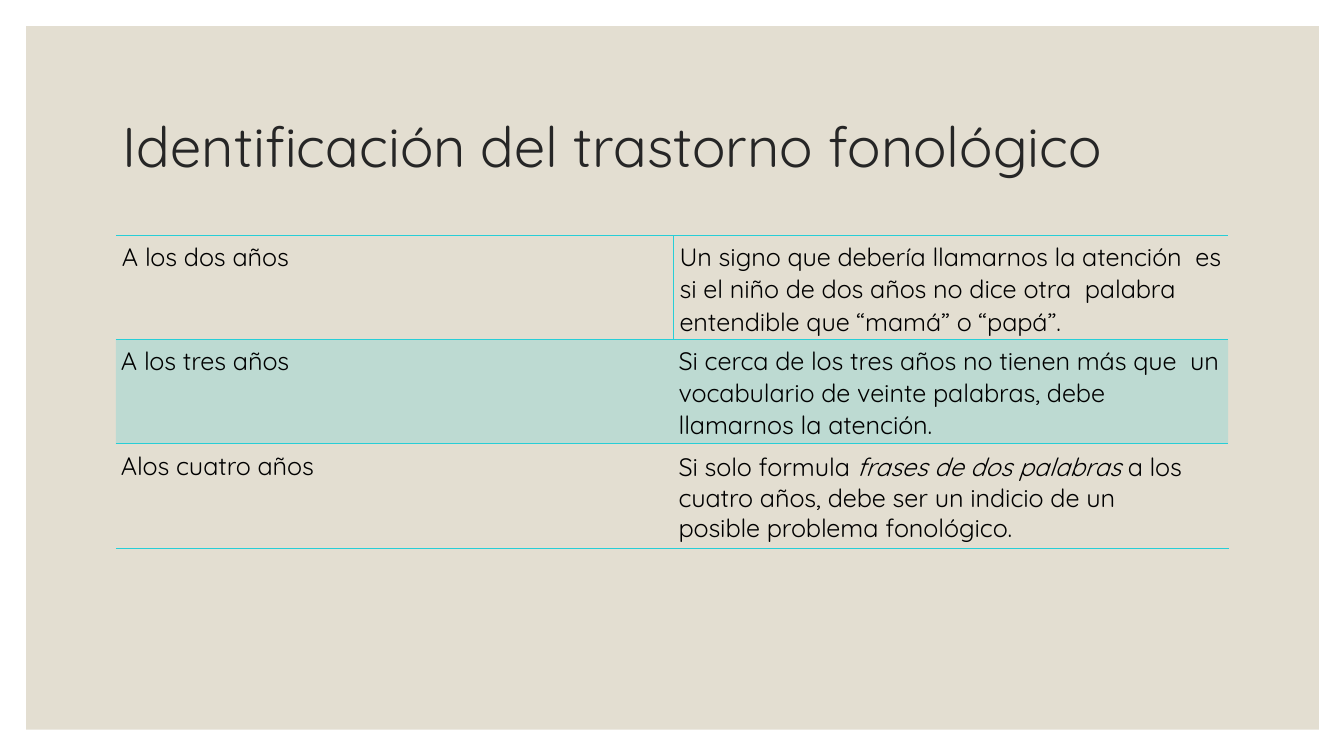
from lxml.etree import SubElement
from pptx import Presentation
from pptx.dml.color import RGBColor
from pptx.enum.shapes import MSO_CONNECTOR, MSO_SHAPE
from pptx.enum.text import MSO_ANCHOR, MSO_AUTO_SIZE
from pptx.oxml import parse_xml
from pptx.oxml.ns import nsdecls, qn
from pptx.util import Pt

PX = 9144
FONT = "Quicksand"
SAND = RGBColor(0xE3, 0xDE, 0xD1)
TEAL = RGBColor(0x27, 0xCE, 0xD7)
DARK = RGBColor(0x26, 0x26, 0x26)
BLACK = RGBColor(0, 0, 0)


class Deck:
    def __init__(self, wide, high):
        self.show = Presentation()
        self.show.slide_width = wide * PX
        self.show.slide_height = high * PX
        self.slide = self.show.slides.add_slide(self.show.slide_layouts[6])
        self.shapes = self.slide.shapes

    def panel(self, *box):
        shape = self.shapes.add_shape(MSO_SHAPE.RECTANGLE, *[n * PX for n in box])
        shape.shadow.inherit = False
        shape.fill.solid()
        shape.fill.fore_color.rgb = SAND
        shape.line.fill.background()

    def words(self, frame, runs, size=18, color=BLACK, track=-5, left=1, first=0,
              before=1, lines=None, tab=None):
        frame.word_wrap = True
        para = frame.paragraphs[0]
        para.space_before = Pt(before)
        if lines:
            para.line_spacing = lines
        props = para._p.get_or_add_pPr()
        props.set("marL", str(left * PX))
        props.set("indent", str(first * PX))
        if tab:
            tabs = SubElement(props, qn("a:tabLst"))
            SubElement(tabs, qn("a:tab"), pos=str(tab * PX), algn="l")
        for text, slant in runs:
            run = para.add_run()
            run.text = text
            run.font.name = FONT
            run.font.size = Pt(size)
            run.font.italic = slant
            run.font.color.rgb = color
            run._r.get_or_add_rPr().set("spc", str(track))

    def text(self, box, runs, **style):
        frame = self.shapes.add_textbox(*[n * PX for n in box]).text_frame
        frame.margin_left = frame.margin_right = frame.margin_bottom = 0
        frame.margin_top = PX
        frame.auto_size = MSO_AUTO_SIZE.SHAPE_TO_FIT_TEXT
        self.words(frame, runs, **style)

    def table(self, left, top, cols, rows):
        grid = self.shapes.add_table(len(rows), len(cols), left * PX, top * PX,
                                     sum(cols) * PX, sum(rows) * PX).table
        grid.first_row = grid.horz_banding = False
        for col, wide in zip(grid.columns, cols):
            col.width = wide * PX
        for row, high in zip(grid.rows, rows):
            row.height = high * PX
        return grid

    def cell(self, cell, sides, fill, alpha=None):
        cell.margin_left = cell.margin_right = cell.margin_bottom = 0
        cell.margin_top = 5 * PX
        cell.vertical_anchor = MSO_ANCHOR.TOP
        cell.fill.solid()
        cell.fill.fore_color.rgb = fill
        props = cell._tc.get_or_add_tcPr()
        if alpha:
            SubElement(props.find(".//" + qn("a:srgbClr")), qn("a:alpha"),
                       val=str(alpha * 1000))
        for spot, side in enumerate("LRTB"):
            paint = "<a:noFill/>"
            if side in sides:
                paint = f'<a:solidFill><a:srgbClr val="{TEAL}"/></a:solidFill>'
            props.insert(spot, parse_xml(
                f'<a:ln{side} {nsdecls("a")} w="12700">{paint}</a:ln{side}>'))

    def line(self, *ends):
        rule = self.shapes.add_connector(MSO_CONNECTOR.STRAIGHT,
                                         *[n * PX for n in ends])
        rule.line.color.rgb = TEAL
        rule.line.width = Pt(1)
        SubElement(rule._element.spPr, qn("a:effectLst"))


def main():
    deck = Deck(1333, 750)
    deck.panel(26, 26, 1282, 698)
    deck.text((121, 110, 1035, 69), [("Identificación del trastorno fonológico", False)],
              size=40, color=DARK, track=0)

    grid = deck.table(115, 234, (553, 550), (103, 103))
    age, sign = grid.cell(0, 0), grid.cell(0, 1)
    three, rest = grid.cell(1, 0), grid.cell(1, 1)
    three.merge(rest)
    deck.cell(age, "RTB", SAND)
    deck.cell(sign, "LTB", SAND)
    for part in (three, rest):
        deck.cell(part, "TB", TEAL, 20)
    deck.words(age.text_frame, [("A los dos años", False)], left=6, before=4)
    deck.words(sign.text_frame, [
        ("Un signo que debería llamarnos la atención  es si el niño de dos años "
         "no dice otra  palabra entendible que “mamá” o “papá”.", False)],
        left=6, before=3.5, lines=1.02)
    deck.words(three.text_frame, [
        ("A los tres años\t", False),
        ("Si cerca de los tres años no tienen más que  un vocabulario de veinte "
         "palabras, debe  llamarnos la atención.", False)],
        left=558, first=-553, before=3.4, lines=1.02, tab=558)

    deck.text((119, 446, 205, 33), [("Alos cuatro años", False)])
    deck.text((672, 446, 517, 94), [
        ("Si solo formula ", False),
        ("frases de dos palabras ", True),
        ("a los  cuatro años, debe ser un indicio de un  posible problema "
         "fonológico.", False)], before=0.6, lines=1.02)
    deck.line(115, 544, 1219, 544)
    deck.show.save("out.pptx")


if __name__ == "__main__":
    main()
